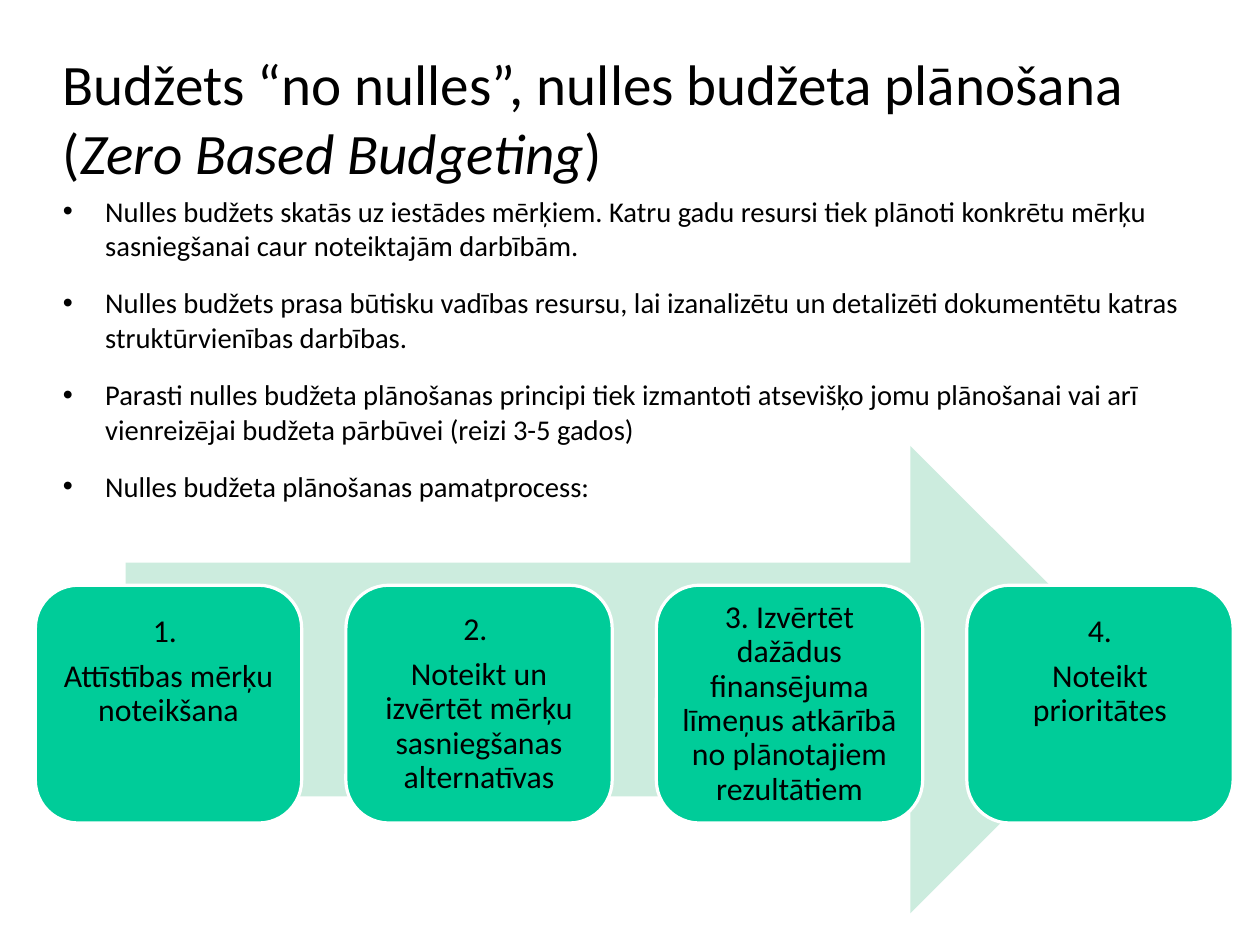
from lxml import etree
from pptx import Presentation
from pptx.dml.color import RGBColor
from pptx.enum.shapes import MSO_SHAPE
from pptx.enum.text import MSO_ANCHOR, MSO_AUTO_SIZE, PP_ALIGN
from pptx.oxml.ns import qn
from pptx.util import Inches, Pt

COLOURS = {"text": "000000", "arrow": "CCECDE", "step": "00CC99", "outline": "FFFFFF"}
FONT = "Calibri"
UNITS_PER_INCH = 576  # the page size is a whole number of these units
BULLETS = [
    "Nulles budžets skatās uz iestādes mērķiem. Katru gadu resursi tiek plānoti "
    "konkrētu mērķu sasniegšanai caur noteiktajām darbībām.",
    "Nulles budžets prasa būtisku vadības resursu, lai izanalizētu un detalizēti "
    "dokumentētu katras struktūrvienības darbības.",
    "Parasti nulles budžeta plānošanas principi tiek izmantoti atsevišķo jomu plānošanai "
    "vai arī vienreizējai budžeta pārbūvei (reizi 3-5 gados)",
    "Nulles budžeta plānošanas pamatprocess:",
]
# Step text and bottom margin in inches; a larger margin lifts the text
STEPS = [
    ("1. \nAttīstības mērķu noteikšana", 0.64),
    ("2. \nNoteikt un izvērtēt mērķu sasniegšanas alternatīvas", 0.07),
    ("3. Izvērtēt dažādus finansējuma līmeņus atkārībā no plānotajiem rezultātiem", 0.07),
    ("4.\nNoteikt prioritātes", 0.64),
]


def set_frame(frame, anchor, side, bottom):
    """Wrap the text and set its anchor and margins, in inches."""
    frame.word_wrap = True
    frame.auto_size = MSO_AUTO_SIZE.NONE
    frame.vertical_anchor = anchor
    frame.margin_left = frame.margin_right = frame.margin_top = Inches(side)
    frame.margin_bottom = Inches(bottom)


def style_paragraph(para, size, align, line_spacing, space_after):
    para.alignment = align
    para.line_spacing = line_spacing
    para.space_before = Pt(0)
    para.space_after = Pt(space_after)
    for span in para.runs:
        span.font.name = FONT
        span.font.size = Pt(size)
        span.font.color.rgb = RGBColor.from_string(COLOURS["text"])


deck = Presentation()
deck.slide_width = Inches(6350) // UNITS_PER_INCH
deck.slide_height = Inches(4762) // UNITS_PER_INCH
page = deck.slides.add_slide(deck.slide_layouts[5])

# Title
title = page.shapes.title
title.left, title.top = Inches(0.55), Inches(0.33)
title.width, title.height = Inches(9.92), Inches(1.38)
set_frame(title.text_frame, MSO_ANCHOR.MIDDLE, 0, 0)
heading = title.text_frame.paragraphs[0]
for words in ("Budžets “no nulles”, nulles budžeta plānošana (", "Zero Based Budgeting", ")"):
    heading.add_run().text = words
style_paragraph(heading, 36, PP_ALIGN.LEFT, 1.01, 0)
heading.runs[1].font.italic = True

# Bullet list
body = page.shapes.add_textbox(Inches(0.55), Inches(1.69), Inches(9.92), Inches(4.51))
set_frame(body.text_frame, MSO_ANCHOR.TOP, 0, 0)
body.text_frame.text = "\n".join(BULLETS)
for para in body.text_frame.paragraphs:
    properties = para._p.get_or_add_pPr()
    properties.set("marL", str(Inches(0.37)))
    properties.set("indent", str(Inches(-0.37)))
    etree.SubElement(properties, qn("a:buFont")).set("typeface", "Arial")
    etree.SubElement(properties, qn("a:buChar")).set("char", "•")
    style_paragraph(para, 18, PP_ALIGN.LEFT, 1.01, 14.2)

# Process arrow
arrow = page.shapes.add_shape(
    MSO_SHAPE.RIGHT_ARROW, Inches(1.1), Inches(3.9), Inches(8.91), Inches(4.09))
arrow.shadow.inherit = False
arrow.fill.solid()
arrow.fill.fore_color.rgb = RGBColor.from_string(COLOURS["arrow"])
arrow.line.fill.background()

# Process steps
for index, (text, bottom) in enumerate(STEPS):
    step = page.shapes.add_shape(
        MSO_SHAPE.ROUNDED_RECTANGLE,
        Inches(0.31 + 8.15 / 3 * index), Inches(5.12), Inches(2.33), Inches(2.08))
    step.adjustments[0] = 0.18
    step.shadow.inherit = False
    step.fill.solid()
    step.fill.fore_color.rgb = RGBColor.from_string(COLOURS["step"])
    step.line.color.rgb = RGBColor.from_string(COLOURS["outline"])
    step.line.width = Pt(2)
    set_frame(step.text_frame, MSO_ANCHOR.MIDDLE, 0.07, bottom)
    step.text_frame.text = text
    for para in step.text_frame.paragraphs:
        style_paragraph(para, 20, PP_ALIGN.CENTER, 0.9, 7)

deck.save("out.pptx")
